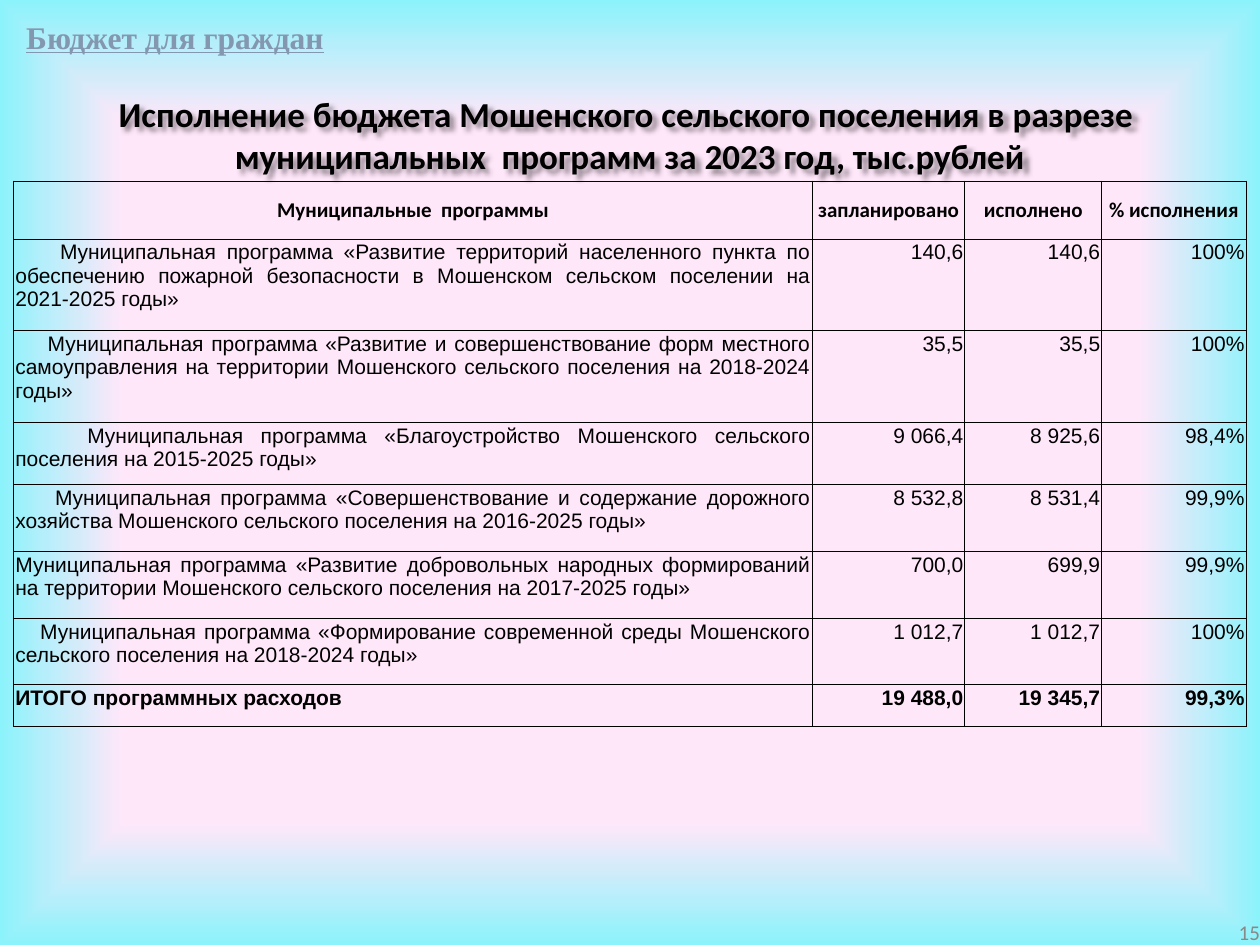
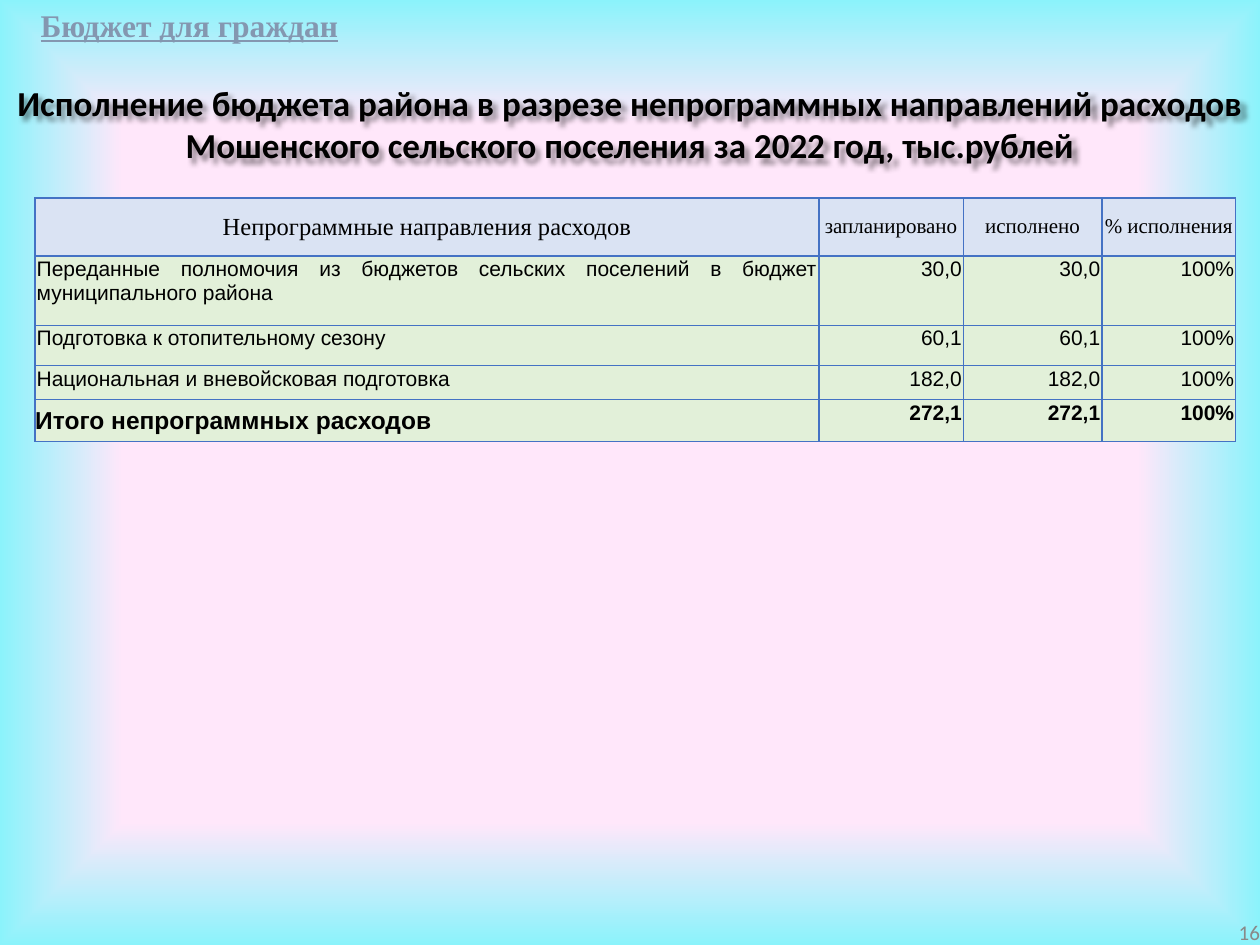
from dataclasses import dataclass

from lxml.etree import SubElement
from pptx import Presentation
from pptx.dml.color import RGBColor
from pptx.enum.text import MSO_ANCHOR, MSO_AUTO_SIZE, PP_ALIGN
from pptx.oxml.ns import qn
from pptx.presentation import Presentation as Deck
from pptx.slide import Slide
from pptx.table import _Cell as Cell
from pptx.text.text import TextFrame
from pptx.util import Cm, Pt

# Shared colours and fonts
BLACK = "000000"
GREY = "898989"
SLATE = "8497B0"
BACKGROUND_STOPS = ((74, "FFE7FA"), (100, "8BF3FB"))
SANS, SERIF, BODY = "Calibri", "Times New Roman", "Arial"
RUBRIC = "Бюджет для граждан"
VALUE_HEADINGS = ("запланировано", "исполнено", "% исполнения")
TITLE_ONLY = 5


@dataclass(frozen=True)
class Font:
    name: str
    size: int = 12
    color: str = BLACK
    bold: bool = False
    underline: bool = False


@dataclass(frozen=True)
class TableStyle:
    heading_font: Font
    label_heading_font: Font
    total_label_font: Font
    total_label_centred: bool
    border_color: str
    border_width: float
    heading_fill: str | None = None
    body_fill: str | None = None


@dataclass(frozen=True)
class BudgetRow:
    label: str
    values: tuple[str, str, str]
    height: float
    indent: float = 0


@dataclass(frozen=True)
class BudgetSlide:
    number: int
    title: tuple[str, ...]
    title_top: float
    rubric_at: tuple[float, float]
    table_at: tuple[float, float]
    column_widths: tuple[float, ...]
    label_heading: str
    rows: tuple[BudgetRow, ...]
    style: TableStyle


TITLE_FONT = Font(SANS, 20, bold=True)
RUBRIC_FONT = Font(SERIF, 18, SLATE, bold=True, underline=True)
NUMBER_FONT = Font(SANS, 12, GREY)
BODY_FONT = Font(BODY)
TOTAL_FONT = Font(BODY, bold=True)
HEADING_HEIGHT = 1.17

PLAIN_STYLE = TableStyle(
    heading_font=Font(SANS, bold=True), label_heading_font=Font(SANS, bold=True),
    total_label_font=TOTAL_FONT, total_label_centred=False,
    border_color=BLACK, border_width=0.5,
)
TINTED_STYLE = TableStyle(
    heading_font=Font(SERIF), label_heading_font=Font(SERIF, 14),
    total_label_font=Font(BODY, 14, bold=True), total_label_centred=True,
    border_color="4472C4", border_width=1,
    heading_fill="DAE3F3", body_fill="E2F0D9",
)

# Content; the last row of each table is its total
SLIDES = (
    BudgetSlide(
        number=15,
        title=("Исполнение бюджета Мошенского сельского поселения в разрезе ",
               "муниципальных  программ за 2023 год, тыс.рублей"),
        title_top=1.73, rubric_at=(0.28, 0.23), table_at=(0.28, 3.65),
        column_widths=(16.1, 3.07, 2.76, 2.91),
        label_heading="Муниципальные  программы",
        rows=(
            BudgetRow("Муниципальная программа «Развитие территорий населенного пункта по "
                      "обеспечению пожарной безопасности в Мошенском сельском поселении на "
                      "2021-2025 годы»", ("140,6", "140,6", "100%"), 1.85, 0.9),
            BudgetRow("Муниципальная программа «Развитие и совершенствование форм местного "
                      "самоуправления на территории Мошенского сельского поселения на "
                      "2018-2024 годы»", ("35,5", "35,5", "100%"), 1.85, 0.65),
            BudgetRow("Муниципальная программа «Благоустройство Мошенского сельского "
                      "поселения на 2015-2025 годы»",
                      ("9 066,4", "8 925,6", "98,4%"), 1.25, 1.45),
            BudgetRow("Муниципальная программа «Совершенствование и содержание дорожного "
                      "хозяйства Мошенского сельского поселения на 2016-2025 годы»",
                      ("8 532,8", "8 531,4", "99,9%"), 1.35, 0.8),
            BudgetRow("Муниципальная программа «Развитие добровольных народных формирований "
                      "на территории Мошенского сельского поселения на 2017-2025 годы»",
                      ("700,0", "699,9", "99,9%"), 1.35),
            BudgetRow("Муниципальная программа «Формирование современной среды Мошенского "
                      "сельского поселения на 2018-2024 годы»",
                      ("1 012,7", "1 012,7", "100%"), 1.33, 0.5),
            BudgetRow("ИТОГО программных расходов",
                      ("19 488,0", "19 345,7", "99,3%"), 0.85),
        ),
        style=PLAIN_STYLE,
    ),
    BudgetSlide(
        number=16,
        title=("Исполнение бюджета района в разрезе непрограммных направлений расходов "
               "Мошенского сельского поселения за 2022 год, тыс.рублей",),
        title_top=1.52, rubric_at=(0.57, 0), table_at=(0.71, 3.99),
        column_widths=(15.8, 2.91, 2.79, 2.7),
        label_heading="Непрограммные направления расходов",
        rows=(
            BudgetRow("Переданные полномочия из бюджетов сельских поселений в бюджет "
                      "муниципального района", ("30,0", "30,0", "100%"), 1.4),
            BudgetRow("Подготовка к отопительному сезону", ("60,1", "60,1", "100%"), 0.81),
            BudgetRow("Национальная и вневойсковая подготовка",
                      ("182,0", "182,0", "100%"), 0.69),
            BudgetRow("Итого непрограммных расходов", ("272,1", "272,1", "100%"), 0.84),
        ),
        style=TINTED_STYLE,
    ),
)


def rgb(color: str) -> RGBColor:
    return RGBColor.from_string(color)


def write(text_frame: TextFrame, text: str, font: Font, alignment: PP_ALIGN) -> None:
    text_frame.text = text
    for paragraph in text_frame.paragraphs:
        paragraph.alignment = alignment
        for run in paragraph.runs:
            run.font.name = font.name
            run.font.size = Pt(font.size)
            run.font.bold = font.bold
            run.font.underline = font.underline
            run.font.color.rgb = rgb(font.color)


def set_margins(target: TextFrame | Cell, side: float, top: float, bottom: float = 0) -> None:
    target.margin_left = target.margin_right = Cm(side)
    target.margin_top, target.margin_bottom = Cm(top), Cm(bottom)


def set_background(presentation: Deck) -> None:
    master = presentation.slide_master
    master.background.fill.gradient()
    gradient = master.element.find(".//" + qn("a:gradFill"))
    for child in list(gradient):
        gradient.remove(child)
    stops = SubElement(gradient, qn("a:gsLst"))
    for position, color in BACKGROUND_STOPS:
        stop = SubElement(stops, qn("a:gs"), pos=str(position * 1000))
        SubElement(stop, qn("a:srgbClr"), val=color)
    focus = SubElement(gradient, qn("a:path"), path="shape")
    SubElement(focus, qn("a:fillToRect"), l="50000", t="50000", r="50000", b="50000")


def add_title(slide: Slide, content: BudgetSlide) -> None:
    shape = slide.shapes.title
    shape.left, shape.top = Cm(0), Cm(content.title_top)
    shape.width, shape.height = Cm(25.4), Cm(1.8)
    text_frame = shape.text_frame
    text_frame.auto_size = MSO_AUTO_SIZE.NONE
    text_frame.vertical_anchor = MSO_ANCHOR.TOP
    write(text_frame, "\n".join(content.title), TITLE_FONT, PP_ALIGN.CENTER)
    # Soft shadow below and to the right of the letters
    effects = SubElement(shape.element.spPr, qn("a:effectLst"))
    shadow = SubElement(effects, qn("a:outerShdw"), blurRad="38100", dist="38100",
                        dir="2700000", algn="tl")
    color = SubElement(shadow, qn("a:srgbClr"), val=BLACK)
    SubElement(color, qn("a:alpha"), val="43000")


def add_rubric(slide: Slide, left: float, top: float) -> None:
    shape = slide.shapes.add_textbox(Cm(left), Cm(top), Cm(6.58), Cm(1.02))
    shape.text_frame.word_wrap = False
    shape.text_frame.auto_size = MSO_AUTO_SIZE.SHAPE_TO_FIT_TEXT
    write(shape.text_frame, RUBRIC, RUBRIC_FONT, PP_ALIGN.LEFT)


def add_slide_number(slide: Slide, number: int) -> None:
    shape = slide.shapes.add_textbox(Cm(19.48), Cm(18.52), Cm(5.92), Cm(0.53))
    text_frame = shape.text_frame
    text_frame.word_wrap = True
    text_frame.vertical_anchor = MSO_ANCHOR.MIDDLE
    set_margins(text_frame, 0, 0)
    write(text_frame, str(number), NUMBER_FONT, PP_ALIGN.RIGHT)


def fill_cell(cell: Cell, text: str, font: Font, alignment: PP_ALIGN, style: TableStyle,
              fill: str | None, centred: bool = False) -> None:
    write(cell.text_frame, text, font, alignment)
    cell.vertical_anchor = MSO_ANCHOR.MIDDLE if centred else MSO_ANCHOR.TOP
    inset = 0 if centred else 0.03
    set_margins(cell, inset, inset)
    properties = cell._tc.get_or_add_tcPr()
    for side in ("lnL", "lnR", "lnT", "lnB"):
        line = SubElement(properties, qn(f"a:{side}"), w=str(Pt(style.border_width)))
        solid = SubElement(line, qn("a:solidFill"))
        SubElement(solid, qn("a:srgbClr"), val=style.border_color)
    if fill:
        cell.fill.solid()
        cell.fill.fore_color.rgb = rgb(fill)
    else:
        cell.fill.background()


def add_budget_table(slide: Slide, content: BudgetSlide) -> None:
    style = content.style
    heights = (HEADING_HEIGHT, *(row.height for row in content.rows))
    left, top = content.table_at
    table = slide.shapes.add_table(
        len(heights), len(content.column_widths), Cm(left), Cm(top),
        Cm(sum(content.column_widths)), Cm(sum(heights))).table
    table.first_row = table.horz_banding = False
    for column, width in zip(table.columns, content.column_widths):
        column.width = Cm(width)
    for table_row, height in zip(table.rows, heights):
        table_row.height = Cm(height)

    # Heading row
    for index, heading in enumerate((content.label_heading, *VALUE_HEADINGS)):
        font = style.heading_font if index else style.label_heading_font
        fill_cell(table.cell(0, index), heading, font, PP_ALIGN.CENTER, style,
                  style.heading_fill, centred=True)

    # Body rows and total
    for index, row in enumerate(content.rows, start=1):
        is_total = index == len(content.rows)
        label_cell = table.cell(index, 0)
        fill_cell(label_cell, row.label, style.total_label_font if is_total else BODY_FONT,
                  PP_ALIGN.JUSTIFY, style, style.body_fill,
                  centred=is_total and style.total_label_centred)
        paragraph = label_cell.text_frame.paragraphs[0]
        paragraph._p.get_or_add_pPr().set("indent", str(Cm(row.indent)))
        for column, value in enumerate(row.values, start=1):
            fill_cell(table.cell(index, column), value, TOTAL_FONT if is_total else BODY_FONT,
                      PP_ALIGN.RIGHT, style, style.body_fill)


def main() -> None:
    presentation = Presentation()
    presentation.slide_width, presentation.slide_height = Cm(25.4), Cm(19.05)
    set_background(presentation)
    for content in SLIDES:
        slide = presentation.slides.add_slide(presentation.slide_layouts[TITLE_ONLY])
        add_slide_number(slide, content.number)
        add_budget_table(slide, content)
        add_title(slide, content)
        add_rubric(slide, *content.rubric_at)
    presentation.save("out.pptx")


if __name__ == "__main__":
    main()
